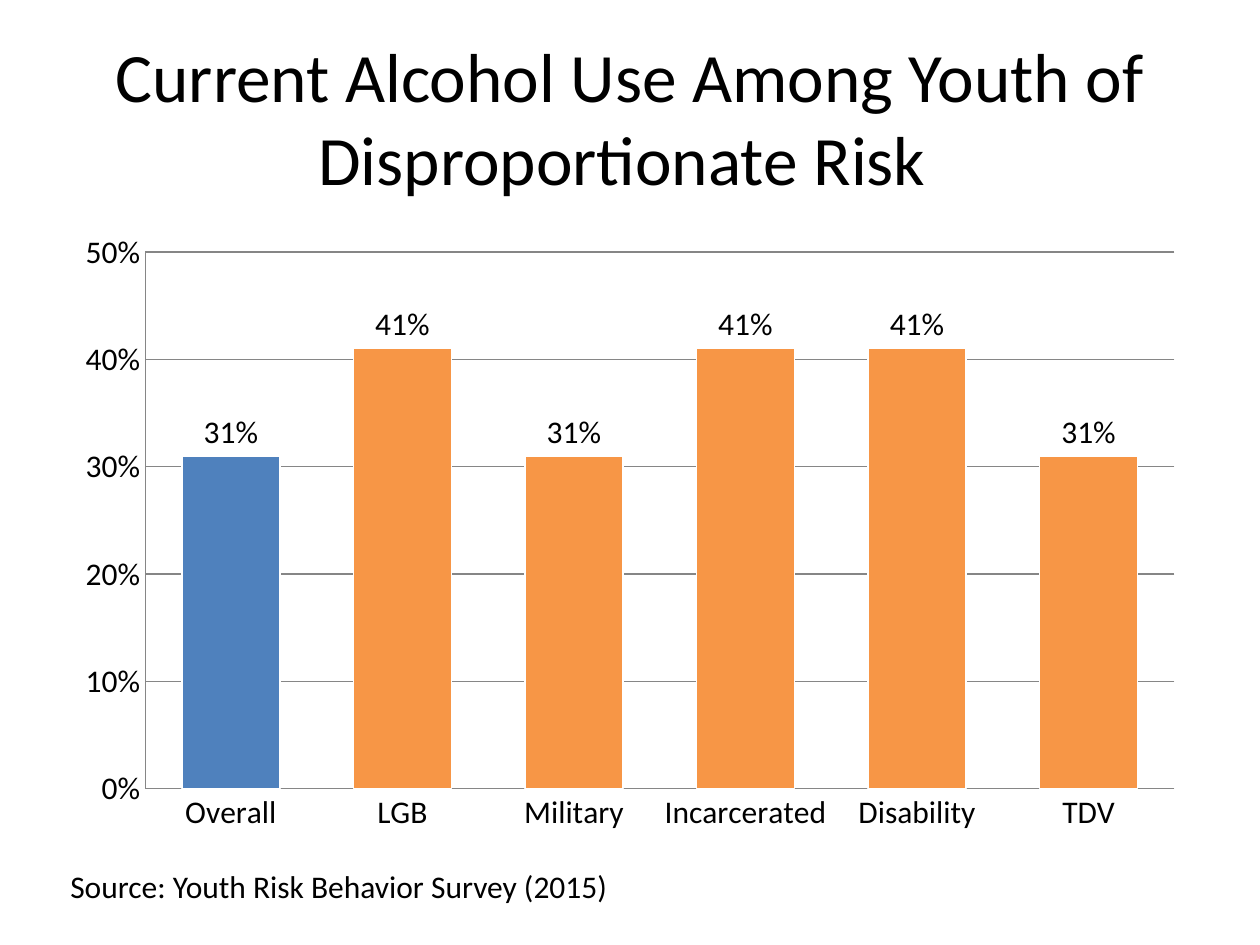
"""Build a slide charting current alcohol use among youth of disproportionate risk."""
from dataclasses import dataclass

import pptx
import pptx.chart.data
import pptx.dml.color
import pptx.enum.chart
import pptx.enum.text
import pptx.util
from pptx.util import Inches

FONT = "Calibri"
COLORS = {
    "text": "000000",
    "overall": "4F81BD",
    "group": "F79646",
    "border": "FFFFFF",
    "grid": "868686",
}


@dataclass(frozen=True)
class TextBlock:
    text: str
    left: float
    top: float
    width: float
    height: float
    size: float
    wrap: bool
    anchor: pptx.enum.text.MSO_ANCHOR
    alignment: pptx.enum.text.PP_ALIGN


@dataclass(frozen=True)
class Rate:
    group: str
    share: float
    color: str = "group"


TEXT_BLOCKS = [
    TextBlock("Current Alcohol Use Among Youth of Disproportionate Risk ",
              0.5, 0.3, 9, 1.25, 39.6, True,
              pptx.enum.text.MSO_ANCHOR.MIDDLE, pptx.enum.text.PP_ALIGN.CENTER),
    TextBlock("Source: Youth Risk Behavior Survey (2015)",
              0.46, 6.83, 4.54, 0.4, 18, False,
              pptx.enum.text.MSO_ANCHOR.TOP, pptx.enum.text.PP_ALIGN.LEFT),
]
RATES = [
    Rate("Overall", 0.31, "overall"),
    Rate("LGB", 0.41),
    Rate("Military", 0.31),
    Rate("Incarcerated", 0.41),
    Rate("Disability", 0.41),
    Rate("TDV", 0.31),
]


def rgb(name: str) -> pptx.dml.color.RGBColor:
    return pptx.dml.color.RGBColor.from_string(COLORS[name])


def style_font(font, size: float) -> None:
    font.name = FONT
    font.size = pptx.util.Pt(size)
    font.bold = False
    font.color.rgb = rgb("text")


def style_line(line, color: str) -> None:
    line.color.rgb = rgb(color)
    line.width = pptx.util.Pt(0.75)


def add_text(slide: pptx.slide.Slide, block: TextBlock) -> None:
    shape = slide.shapes.add_textbox(Inches(block.left), Inches(block.top),
                                     Inches(block.width), Inches(block.height))
    frame = shape.text_frame
    frame.word_wrap = block.wrap
    frame.vertical_anchor = block.anchor
    paragraph = frame.paragraphs[0]
    paragraph.alignment = block.alignment
    run = paragraph.add_run()
    run.text = block.text
    style_font(run.font, block.size)


def style_axes(chart: pptx.chart.chart.Chart) -> None:
    for axis in (chart.category_axis, chart.value_axis):
        axis.major_tick_mark = pptx.enum.chart.XL_TICK_MARK.NONE
        axis.minor_tick_mark = pptx.enum.chart.XL_TICK_MARK.NONE
        style_line(axis.format.line, "grid")
        style_font(axis.tick_labels.font, 18)
    value_axis = chart.value_axis
    value_axis.minimum_scale = 0
    value_axis.maximum_scale = 0.5
    value_axis.major_unit = 0.1
    value_axis.has_major_gridlines = True
    style_line(value_axis.major_gridlines.format.line, "grid")
    value_axis.tick_labels.number_format = "0%"
    value_axis.tick_labels.number_format_is_linked = False


def add_rate_chart(slide: pptx.slide.Slide, rates: list[Rate]) -> None:
    data = pptx.chart.data.CategoryChartData(number_format="0%")
    data.categories = [rate.group for rate in rates]
    data.add_series("Series 1", [rate.share for rate in rates])
    chart = slide.shapes.add_chart(
        pptx.enum.chart.XL_CHART_TYPE.COLUMN_CLUSTERED,
        Inches(0.5), Inches(1.75), Inches(9), Inches(4.95), data).chart
    chart.has_title = False
    chart.has_legend = False
    style_font(chart.font, 18)
    style_axes(chart)

    plot = chart.plots[0]
    plot.vary_by_categories = False
    plot.gap_width = 75
    plot.overlap = -25
    series = plot.series[0]
    series.invert_if_negative = False
    for index, rate in enumerate(rates):
        column = series.points[index].format
        column.fill.solid()
        column.fill.fore_color.rgb = rgb(rate.color)
        style_line(column.line, "border")

    labels = series.data_labels
    labels.show_value = True
    labels.number_format = "0%"
    labels.number_format_is_linked = False
    labels.position = pptx.enum.chart.XL_LABEL_POSITION.OUTSIDE_END
    style_font(labels.font, 18)


def main() -> None:
    presentation = pptx.Presentation()
    presentation.slide_width = Inches(10)
    presentation.slide_height = Inches(7.5)
    slide = presentation.slides.add_slide(presentation.slide_layouts[6])
    for block in TEXT_BLOCKS:
        add_text(slide, block)
    add_rate_chart(slide, RATES)
    presentation.save("out.pptx")


if __name__ == "__main__":
    main()
